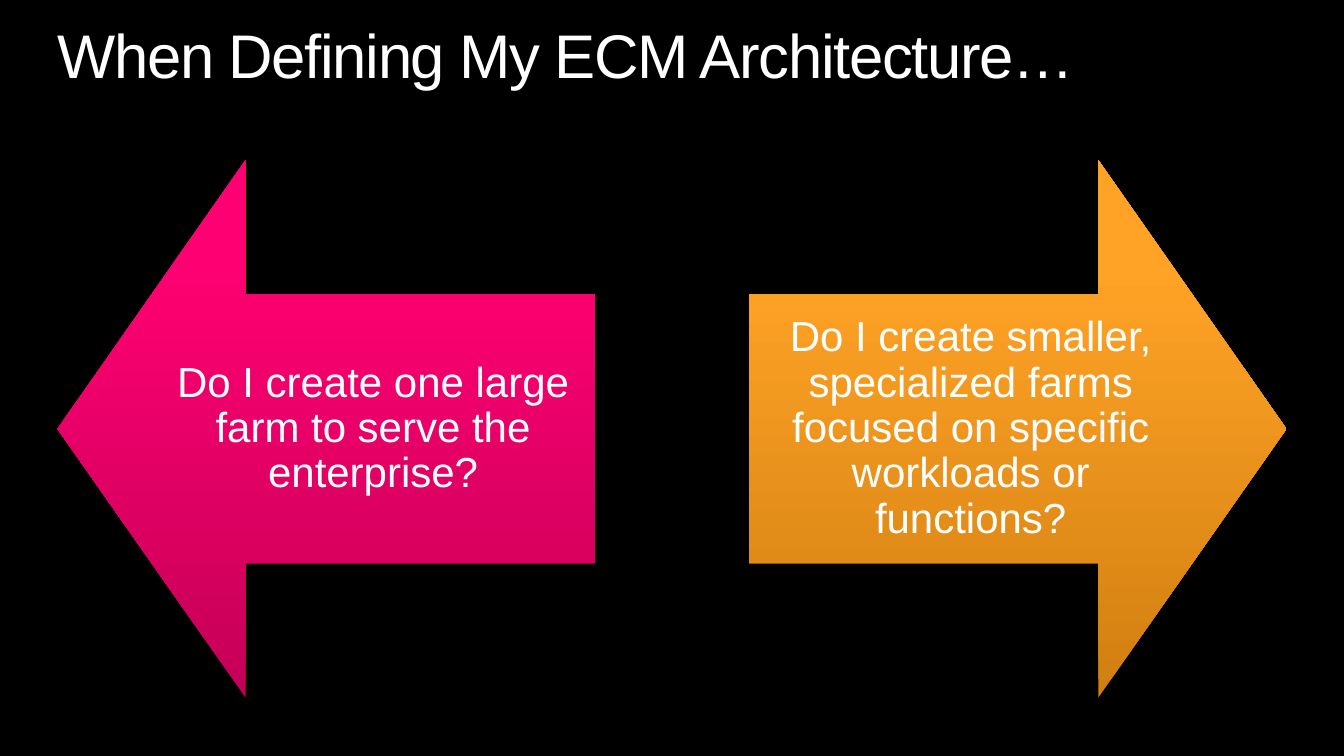
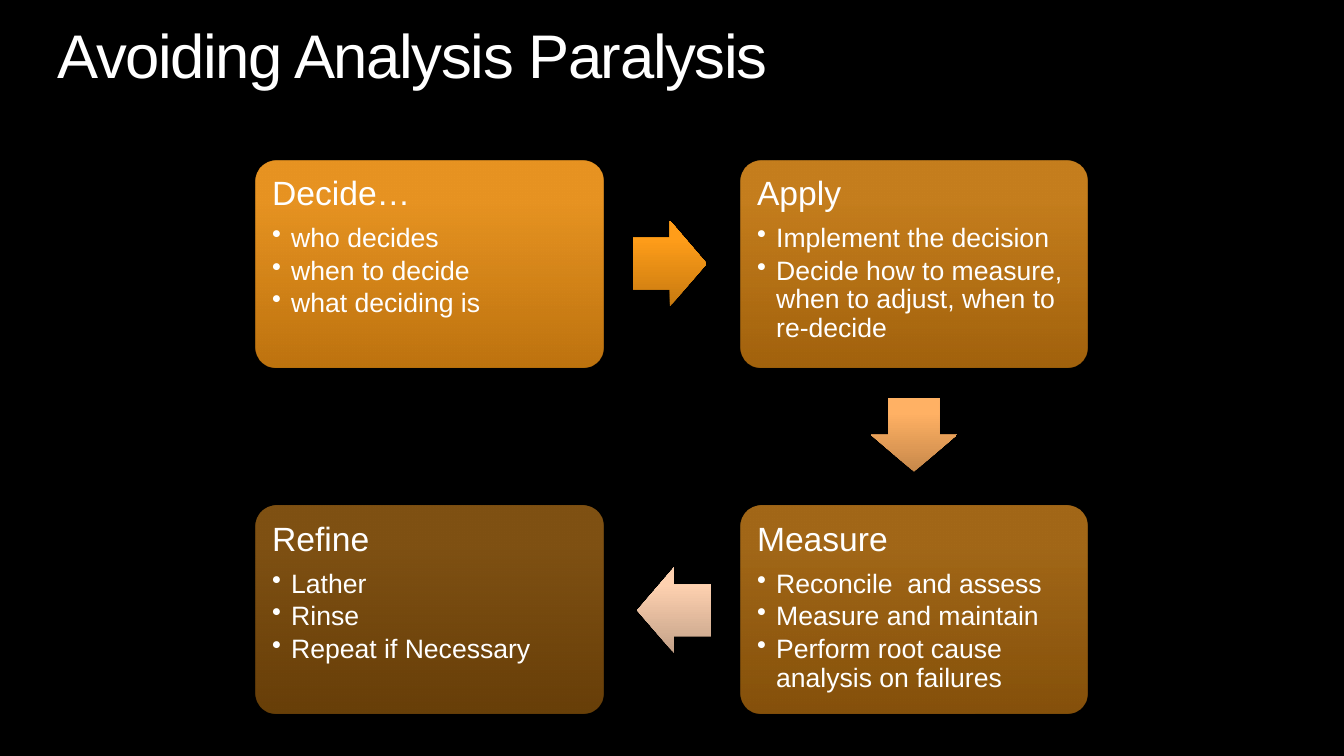
"""Build two slides on choosing and refining an ECM architecture."""
from dataclasses import dataclass
from typing import Any

from lxml.etree import SubElement
from pptx import Presentation
from pptx.dml.color import RGBColor
from pptx.enum.shapes import MSO_SHAPE
from pptx.enum.text import MSO_ANCHOR, PP_ALIGN
from pptx.oxml.ns import qn
from pptx.presentation import Presentation as Deck
from pptx.shapes.autoshape import Shape
from pptx.slide import Slide
from pptx.text.text import TextFrame
from pptx.util import Inches, Pt

BLACK = RGBColor(0x00, 0x00, 0x00)
WHITE = RGBColor(0xFF, 0xFF, 0xFF)
PINK = (RGBColor(0xC4, 0x00, 0x57), RGBColor(0xFE, 0x00, 0x71))
ORANGE = (RGBColor(0xD1, 0x7F, 0x11), RGBColor(0xFF, 0xA3, 0x26))
AMBER = (RGBColor(0xC7, 0x7A, 0x10), RGBColor(0xFF, 0x9D, 0x19))
APRICOT = (RGBColor(0xC7, 0x88, 0x4A), RGBColor(0xFF, 0xB1, 0x64))
PEACH = (RGBColor(0xC3, 0xA1, 0x88), RGBColor(0xFE, 0xD1, 0xB0))

SLIDE_WIDTH, SLIDE_HEIGHT = 13.33, 7.5
MARGIN = 0.57
CONTENT_TOP = 1.59
CHOICE_SIZE = 5.33
CARD_WIDTH, CARD_HEIGHT = 3.44, 2.06
COLUMNS = (2.54, 7.35)
ROWS = (CONTENT_TOP, 5.02)
BULLET_INDENT = 0.19

TITLE_FONT = {"name": "Arial", "size": Pt(44)}
CHOICE_FONT = {"name": "Arial", "size": Pt(30)}
HEADING_FONT = {"name": "Arial", "size": Pt(24)}
BULLET_FONT = {"name": "Arial", "size": Pt(19)}
CHOICE_FORMAT = {"alignment": PP_ALIGN.CENTER, "line_spacing": 0.9}
TITLE_FORMAT = {"alignment": PP_ALIGN.LEFT, "line_spacing": 0.9}
HEADING_FORMAT = TITLE_FORMAT | {"space_after": Pt(8.4)}
BULLET_FORMAT = TITLE_FORMAT | {"space_after": Pt(2.85), "level": 1}

Gradient = tuple[RGBColor, RGBColor]


@dataclass(frozen=True)
class Box:
    """Position and size in inches."""
    left: float
    top: float
    width: float
    height: float

    def lengths(self) -> tuple[Inches, ...]:
        """Return the four values as lengths."""
        return tuple(Inches(v) for v in (self.left, self.top, self.width, self.height))


@dataclass(frozen=True)
class Choice:
    """A large arrow holding a question."""
    kind: MSO_SHAPE
    left: float
    colors: Gradient
    question: str


@dataclass(frozen=True)
class Card:
    """A step of the cycle with its bullets."""
    column: int
    row: int
    opacity: int
    heading: str
    bullets: tuple[str, ...]


@dataclass(frozen=True)
class StepArrow:
    """A small arrow between two cards."""
    kind: MSO_SHAPE
    box: Box
    colors: Gradient


CHOICES = (
    Choice(MSO_SHAPE.LEFT_ARROW, MARGIN, PINK,
           "Do I create one large farm to serve the enterprise?"),
    Choice(MSO_SHAPE.RIGHT_ARROW, SLIDE_WIDTH - MARGIN - CHOICE_SIZE, ORANGE,
           "Do I create smaller, specialized farms focused on specific workloads or functions?"),
)
CARDS = (
    Card(0, 0, 90, "Decide…", ("who decides", "when to decide", "what deciding is")),
    Card(1, 0, 77, "Apply", ("Implement the decision",
                             "Decide how to measure, when to adjust, when to re-decide")),
    Card(1, 1, 63, "Measure", ("Reconcile  and assess", "Measure and maintain",
                               "Perform root cause analysis on failures")),
    Card(0, 1, 50, "Refine", ("Lather", "Rinse", "Repeat if Necessary")),
)
STEP_ARROWS = (
    StepArrow(MSO_SHAPE.RIGHT_ARROW, Box(6.28, 2.19, 0.73, 0.85), AMBER),
    StepArrow(MSO_SHAPE.DOWN_ARROW, Box(8.64, 3.95, 0.85, 0.73), APRICOT),
    StepArrow(MSO_SHAPE.LEFT_ARROW, Box(6.32, 5.63, 0.73, 0.85), PEACH),
)


def set_values(target: Any, values: dict[str, Any]) -> None:
    """Set each named attribute on the target."""
    for name, value in values.items():
        setattr(target, name, value)


def prepare_frame(frame: TextFrame, inset: float, anchor: MSO_ANCHOR) -> None:
    """Set wrapping, anchor and equal insets."""
    set_values(frame, {"word_wrap": True, "vertical_anchor": anchor})
    set_values(frame, {f"margin_{side}": Inches(inset)
                       for side in ("left", "top", "right", "bottom")})


def write_paragraph(frame: TextFrame, text: str, layout: dict[str, Any],
                    font: dict[str, Any], bullet: bool = False) -> None:
    """Write text in the empty first paragraph or in a new one."""
    paragraph = frame.paragraphs[0] if not frame.text else frame.add_paragraph()
    set_values(paragraph, layout)
    if bullet:
        properties = paragraph._p.get_or_add_pPr()
        properties.set("marL", str(Inches(BULLET_INDENT)))
        properties.set("indent", str(-Inches(BULLET_INDENT)))
        SubElement(properties, qn("a:buChar"), char="•")
    run = paragraph.add_run()
    run.text = text
    set_values(run.font, font)
    run.font.color.rgb = WHITE


def add_gradient_shape(slide: Slide, kind: MSO_SHAPE, box: Box, adjustments: tuple[float, ...],
                       colors: Gradient, opacity: int = 100) -> Shape:
    """Draw a borderless shape shaded from dark at the bottom to light."""
    shape = slide.shapes.add_shape(kind, *box.lengths())
    for index, value in enumerate(adjustments):
        shape.adjustments[index] = value
    shape.shadow.inherit = False
    shape.line.fill.background()
    shape.fill.gradient()
    shape.fill.gradient_angle = 90
    for stop, color, position in zip(shape.fill.gradient_stops, colors, (0, 0.8)):
        stop.color.rgb = color
        stop.position = position
    if opacity < 100:
        for color_element in shape._element.spPr.findall(".//" + qn("a:srgbClr")):
            SubElement(color_element, qn("a:alpha"), val=str(opacity * 1000))
    return shape


def add_titled_slide(presentation: Deck, title: str) -> Slide:
    """Add a black slide with its title."""
    slide = presentation.slides.add_slide(presentation.slide_layouts[6])
    slide.background.fill.solid()
    slide.background.fill.fore_color.rgb = BLACK
    box = Box(MARGIN, 0.25, SLIDE_WIDTH - 2 * MARGIN, 0.67)
    frame = slide.shapes.add_textbox(*box.lengths()).text_frame
    prepare_frame(frame, 0, MSO_ANCHOR.TOP)
    write_paragraph(frame, title, TITLE_FORMAT, TITLE_FONT)
    frame.paragraphs[0].runs[0]._r.get_or_add_rPr().set("spc", "-100")
    return slide


def draw_choice(slide: Slide, choice: Choice) -> None:
    """Draw a large arrow with its question."""
    box = Box(choice.left, CONTENT_TOP, CHOICE_SIZE, CHOICE_SIZE)
    shape = add_gradient_shape(slide, choice.kind, box, (0.5, 0.35), choice.colors)
    prepare_frame(shape.text_frame, 0.23, MSO_ANCHOR.MIDDLE)
    write_paragraph(shape.text_frame, choice.question, CHOICE_FORMAT, CHOICE_FONT)


def draw_card(slide: Slide, card: Card) -> None:
    """Draw a rounded card with heading and bullets."""
    box = Box(COLUMNS[card.column], ROWS[card.row], CARD_WIDTH, CARD_HEIGHT)
    shape = add_gradient_shape(slide, MSO_SHAPE.ROUNDED_RECTANGLE, box, (0.1,),
                               ORANGE, card.opacity)
    prepare_frame(shape.text_frame, 0.1, MSO_ANCHOR.TOP)
    write_paragraph(shape.text_frame, card.heading, HEADING_FORMAT, HEADING_FONT)
    for text in card.bullets:
        write_paragraph(shape.text_frame, text, BULLET_FORMAT, BULLET_FONT, bullet=True)


def main() -> None:
    """Build and save the presentation."""
    presentation = Presentation()
    set_values(presentation, {"slide_width": Inches(SLIDE_WIDTH),
                              "slide_height": Inches(SLIDE_HEIGHT)})
    choices_slide = add_titled_slide(presentation, "When Defining My ECM Architecture…")
    for choice in CHOICES:
        draw_choice(choices_slide, choice)
    cycle_slide = add_titled_slide(presentation, "Avoiding Analysis Paralysis")
    for card in CARDS:
        draw_card(cycle_slide, card)
    for arrow in STEP_ARROWS:
        add_gradient_shape(cycle_slide, arrow.kind, arrow.box, (0.6, 0.5), arrow.colors)
    presentation.save("out.pptx")


if __name__ == "__main__":
    main()
